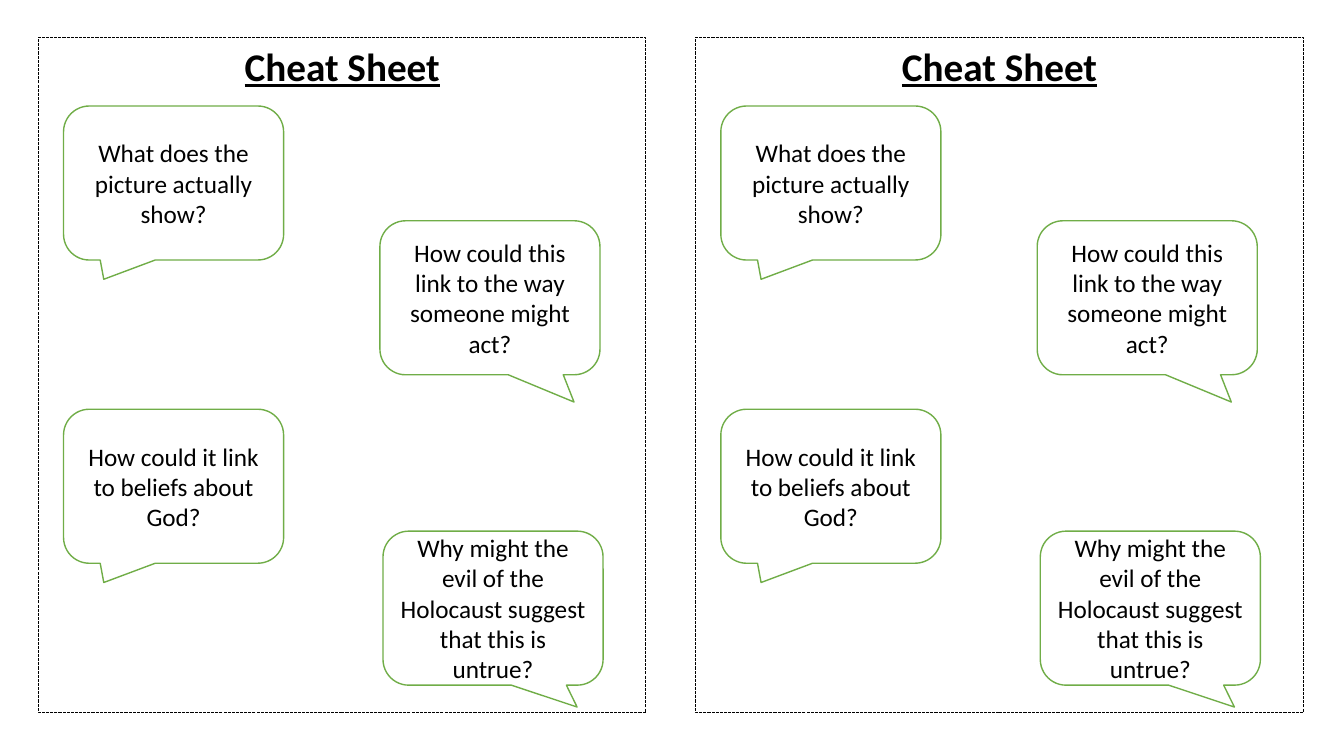
import pptx
import pptx.util
import pptx.dml.color
import pptx.enum.dml
import pptx.enum.shapes
import pptx.enum.text
from dataclasses import dataclass

Pt = pptx.util.Pt
RGB = pptx.dml.color.RGBColor
Shape = pptx.enum.shapes.MSO_SHAPE
Anchor = pptx.enum.text.MSO_ANCHOR


@dataclass(frozen=True)
class Theme:
    font: str = "Calibri"
    ink: str = "000000"
    paper: str = "FFFFFF"
    green: str = "70AD47"
    title: int = 28
    body: int = 18


THEME = Theme()

# Each bubble: offset in the card, tail tip, question
LEFT_TIP = (-0.317, 0.625)
BUBBLES = [
    (18, 49, LEFT_TIP, "What does the picture actually show?"),
    (244, 131, (0.382, 0.677),
     "How could this link to the way someone might act?"),
    (18, 265.6, LEFT_TIP, "How could it link to beliefs about God?"),
    (246.2, 352.7, (0.382, 0.642),
     "Why might the evil of the Holocaust suggest that this is untrue?"),
]


def add_box(slide, kind, box, edge, width, text, size, anchor):
    """Place an outlined shape with centred text."""
    shape = slide.shapes.add_shape(kind, *map(Pt, box))
    shape.shadow.inherit = False
    shape.line.color.rgb = RGB.from_string(edge)
    shape.line.width = Pt(width)
    frame = shape.text_frame
    frame.word_wrap = True
    frame.vertical_anchor = anchor
    para = frame.paragraphs[0]
    para.text = text
    para.alignment = pptx.enum.text.PP_ALIGN.CENTER
    para.font.name = THEME.font
    para.font.size = Pt(size)
    para.font.color.rgb = RGB.from_string(THEME.ink)
    return shape


def add_bubble(slide, box, tip, text):
    """Place a speech bubble whose tail ends at tip."""
    bubble = add_box(slide, Shape.ROUNDED_RECTANGULAR_CALLOUT, box,
                     THEME.green, 1, text, THEME.body, Anchor.MIDDLE)
    bubble.fill.solid()
    bubble.fill.fore_color.rgb = RGB.from_string(THEME.paper)
    bubble.adjustments[0], bubble.adjustments[1] = tip
    bubble.adjustments[2] = 0.167


def add_card(slide, box):
    """Place one cheat sheet: dashed frame, heading and bubbles."""
    left, top, _, _ = box
    frame = add_box(slide, Shape.RECTANGLE, box, THEME.ink, 0.75,
                    "Cheat Sheet", THEME.title, Anchor.TOP)
    frame.fill.background()
    frame.line.dash_style = pptx.enum.dml.MSO_LINE.SQUARE_DOT
    head = frame.text_frame.paragraphs[0].font
    head.bold = True
    head.underline = True
    for x, y, tip, text in BUBBLES:
        add_bubble(slide, (left + x, top + y, 157.2, 110), tip, text)


def main():
    deck = pptx.Presentation()
    deck.slide_width, deck.slide_height = Pt(960), Pt(540)
    slide = deck.slides.add_slide(deck.slide_layouts[6])
    # Two equal cards side by side
    for col in range(2):
        add_card(slide, (27.4 + 469.5 * col, 26.7, 434, 482.2))
    deck.save("out.pptx")


if __name__ == "__main__":
    main()
